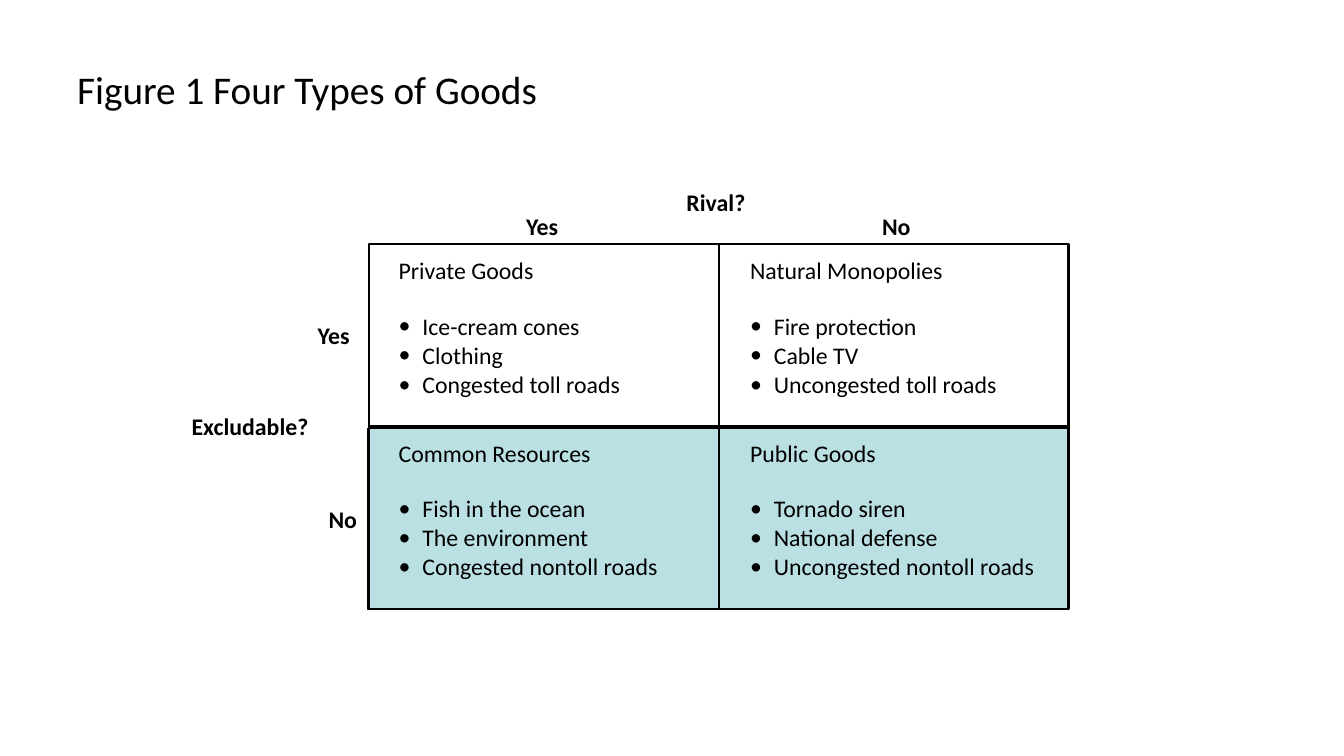
import pptx
import pptx.dml.color
import pptx.enum.shapes
import pptx.enum.text
import pptx.oxml
import pptx.oxml.ns
import pptx.util


def colour(code):
    return pptx.dml.color.RGBColor.from_string(code)


class GoodsSlide:
    font = "Calibri"
    ink = "000000"
    shade = "BBE0E3"
    text_size = 17
    rule_width = 1.63

    def __init__(self, deck):
        self.column = deck.slide_width / 100
        self.row = deck.slide_height / 100
        self.page = deck.slides.add_slide(deck.slide_layouts[6])

    def place(self, left, top, width, height):
        return (round(left * self.column), round(top * self.row),
                round(width * self.column), round(height * self.row))

    def rectangle(self, *area, fill=None, line_width=rule_width):
        box = self.page.shapes.add_shape(
            pptx.enum.shapes.MSO_SHAPE.RECTANGLE, *self.place(*area))
        box.shadow.inherit = False
        if fill:
            box.fill.solid()
            box.fill.fore_color.rgb = colour(fill)
        else:
            box.fill.background()
        box.line.color.rgb = colour(self.ink)
        box.line.width = pptx.util.Pt(line_width)
        return box

    def divider(self, box, start, end):
        line = self.page.shapes.add_connector(
            pptx.enum.shapes.MSO_CONNECTOR.STRAIGHT, 0, 0, 0, 0)
        line.begin_connect(box, start)
        line.end_connect(box, end)
        line.line.color.rgb = colour(self.ink)
        line.line.width = pptx.util.Pt(self.rule_width)
        properties = line._element.spPr
        properties.append(pptx.oxml.parse_xml(
            f"<a:effectLst {pptx.oxml.ns.nsdecls('a')}/>"))

    def text(self, words, *area, size=text_size, bold=False, inset=0, wrap=False,
             middle=False, line_spacing=None, space_before=0, bullets=False):
        box = self.page.shapes.add_textbox(*self.place(*area))
        frame = box.text_frame
        frame.word_wrap = wrap
        frame.margin_left = frame.margin_right = pptx.util.Inches(inset)
        frame.margin_top = frame.margin_bottom = pptx.util.Inches(inset / 2)
        anchors = pptx.enum.text.MSO_ANCHOR
        frame.vertical_anchor = anchors.MIDDLE if middle else anchors.TOP
        frame.text = words
        for para in frame.paragraphs:
            para.line_spacing = line_spacing
            para.space_before = pptx.util.Pt(space_before)
            if bullets:
                self.bullet(para)
            for span in para.runs:
                span.font.name = self.font
                span.font.size = pptx.util.Pt(size)
                span.font.bold = bold
                span.font.color.rgb = colour(self.ink)

    def bullet(self, para):
        properties = para._p.get_or_add_pPr()
        indent = round(1.77 * self.column)
        properties.set("marL", str(indent))
        properties.set("indent", str(-indent))
        names = pptx.oxml.ns.nsdecls("a")
        for mark in (f'<a:buFont {names} typeface="{self.font}"/>',
                     f'<a:buChar {names} char="•"/>'):
            properties.append(pptx.oxml.parse_xml(mark))


LABELS = [
    ("Rival?", 51.08, 24.8, 4.43),
    ("Yes", 39.15, 28, 2.4),
    ("No", 65.63, 28, 2.18),
    ("Yes", 23.63, 42.4, 2.4),
    ("No", 24.45, 66.8, 2.18),
    ("Excludable?", 14.25, 54.4, 8.78),
]

QUADRANTS = [
    [("Private Goods", 10.13,
      ["Ice-cream cones", "Clothing", "Congested toll roads"]),
     ("Natural Monopolies", 14.4,
      ["Fire protection", "Cable TV", "Uncongested toll roads"])],
    [("Common Resources", 14.4,
      ["Fish in the ocean", "The environment", "Congested nontoll roads"]),
     ("Public Goods", 9.45,
      ["Tornado siren", "National defense", "Uncongested nontoll roads"])],
]

COLUMN_STEP = 26.15
ROW_STEP = 24.13
LABEL_HEIGHT = 3.87


def main():
    deck = pptx.Presentation()
    deck.slide_width = pptx.util.Inches(13.333)
    deck.slide_height = pptx.util.Inches(7.5)
    slide = GoodsSlide(deck)

    slide.rectangle(27.38, 56.67, 52.13, 24, fill=slide.shade, line_width=1)
    slide.text("Figure 1 Four Types of Goods", 5, 4, 90, 16.67, size=28,
               inset=0.1, wrap=True, middle=True, line_spacing=0.8)
    matrix = slide.rectangle(27.45, 32.27, 52.05, 48.27)
    slide.divider(matrix, 0, 2)
    slide.divider(matrix, 3, 1)

    for words, left, top, width in LABELS:
        slide.text(words, left, top, width, LABEL_HEIGHT, bold=True)

    for row, quadrants in enumerate(QUADRANTS):
        for column, (heading, width, goods) in enumerate(quadrants):
            left = 29.66 + column * COLUMN_STEP
            top = 33.87 + row * ROW_STEP
            slide.text(heading, left, top, width, LABEL_HEIGHT)
            slide.text("\n".join(goods), left, top + 7.33, 22, 11.73,
                       wrap=True, space_before=0.4, bullets=True)

    deck.save("out.pptx")


if __name__ == "__main__":
    main()
